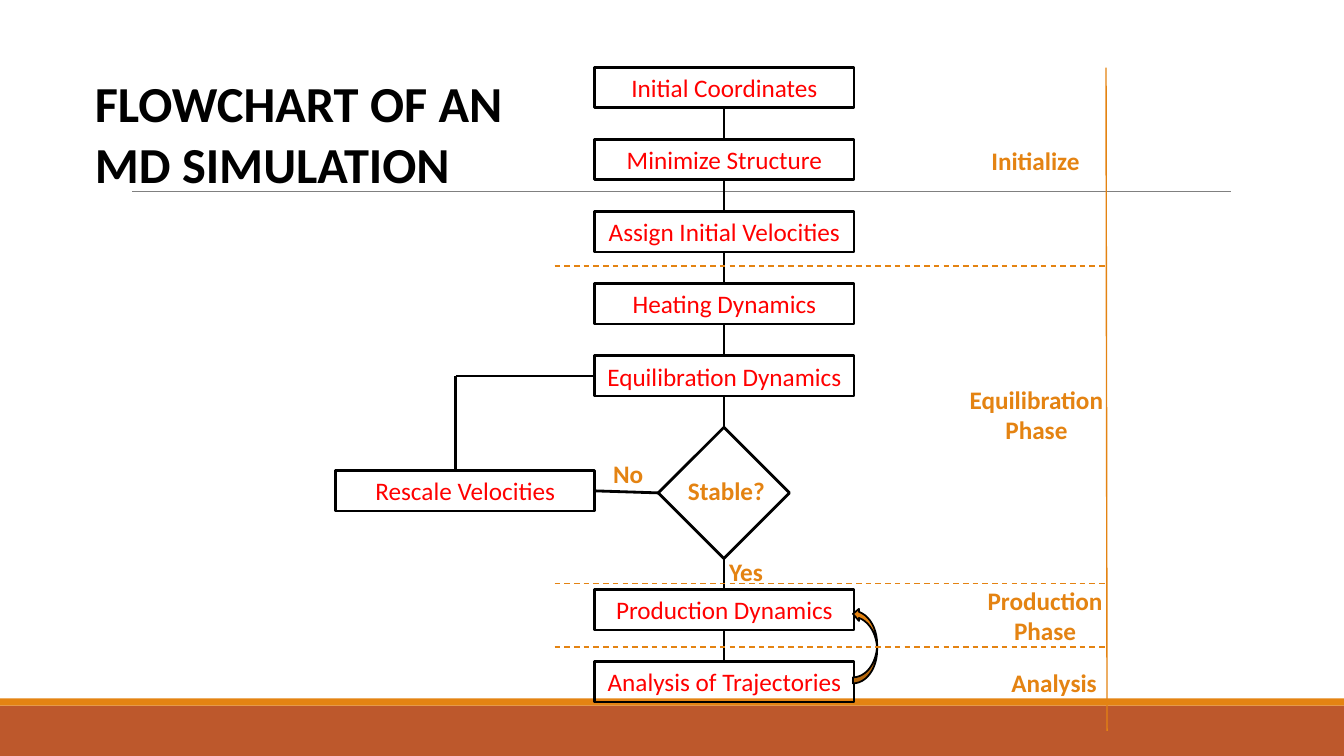
from lxml.etree import SubElement
from pptx import Presentation
from pptx.dml.color import RGBColor
from pptx.enum.dml import MSO_LINE
from pptx.enum.shapes import MSO_CONNECTOR, MSO_SHAPE
from pptx.enum.text import MSO_ANCHOR, PP_ALIGN
from pptx.oxml.ns import qn
from pptx.util import Inches, Pt

BLACK = RGBColor(0x00, 0x00, 0x00)
RED = RGBColor(0xFF, 0x00, 0x00)
ORANGE = RGBColor(0xE4, 0x83, 0x12)
RUST = RGBColor(0xBD, 0x58, 0x2C)
GRAY = RGBColor(0x80, 0x80, 0x80)

FONT = "Calibri"
BOX_LEFT, BOX_WIDTH, BOX_HEIGHT = 5.9, 2.57, 0.4
FLOW_X = 7.18
FIRST_TOP, PRODUCTION_TOP, STEP = 0.67, 5.85, 0.715
DIAMOND_TOP, DIAMOND_SIZE = 4.24, 1.3

PREPARATION_STEPS = [
    "Initial Coordinates",
    "Minimize Structure",
    "Assign Initial Velocities",
    "Heating Dynamics",
    "Equilibration Dynamics",
]
PRODUCTION_STEPS = ["Production Dynamics", "Analysis of Trajectories"]
LABELS = [
    ("Stable?", 6.72, 4.67, 0.97, 0.4),
    ("Yes", 7.13, 5.47, 0.54, 0.4),
    ("No", 5.98, 4.5, 0.5, 0.4),
    ("Initialize", 9.73, 1.39, 1.08, 0.4),
    ("Equilibration\nPhase", 9.51, 3.76, 1.54, 0.71),
    ("Production\nPhase", 9.69, 5.76, 1.35, 0.71),
    ("Analysis", 9.93, 6.57, 1.05, 0.4),
]


def format_text(text_frame, size, color, bold, alignment):
    for paragraph in text_frame.paragraphs:
        paragraph.alignment = alignment
        for run in paragraph.runs:
            run.font.name = FONT
            run.font.size = Pt(size)
            run.font.bold = bold
            run.font.color.rgb = color


def add_outline(slide, kind, left, top, width, height, line_width=2, fill=None):
    shape = slide.shapes.add_shape(
        kind, Inches(left), Inches(top), Inches(width), Inches(height)
    )
    shape.shadow.inherit = False
    if fill is None:
        shape.fill.background()
    else:
        shape.fill.solid()
        shape.fill.fore_color.rgb = fill
    shape.line.color.rgb = BLACK
    shape.line.width = Pt(line_width)
    return shape


def add_band(slide, top, height, color):
    band = add_outline(slide, MSO_SHAPE.RECTANGLE, 0, top, 13.33, height, fill=color)
    band.line.fill.background()


def add_step(slide, text, left, top):
    box = add_outline(slide, MSO_SHAPE.RECTANGLE, left, top, BOX_WIDTH, BOX_HEIGHT)
    box.text_frame.text = text
    format_text(box.text_frame, 18, RED, False, PP_ALIGN.CENTER)


def add_label(slide, text, left, top, width, height):
    label = slide.shapes.add_textbox(
        Inches(left), Inches(top), Inches(width), Inches(height)
    )
    label.text_frame.word_wrap = False
    label.text_frame.text = text
    format_text(label.text_frame, 18, ORANGE, True, PP_ALIGN.CENTER)


def add_line(slide, start, end, color=BLACK, width=2, dashed=False):
    line = slide.shapes.add_connector(
        MSO_CONNECTOR.STRAIGHT, *(Inches(value) for value in (*start, *end))
    )
    line.line.color.rgb = color
    line.line.width = Pt(width)
    if dashed:
        line.line.dash_style = MSO_LINE.DASH
    SubElement(line._element.spPr, qn("a:effectLst"))


def add_title(slide):
    title = slide.shapes.title
    title.left, title.top = Inches(0.84), Inches(0.67)
    title.width, title.height = Inches(4.69), Inches(1.31)
    title.text_frame.text = "FLOWCHART OF AN MD SIMULATION"
    title.text_frame.word_wrap = True
    title.text_frame.vertical_anchor = MSO_ANCHOR.TOP
    format_text(title.text_frame, 36, BLACK, True, PP_ALIGN.LEFT)


def add_flow(slide):
    stations = [(DIAMOND_TOP, DIAMOND_SIZE)]
    for first_top, steps in (
        (FIRST_TOP, PREPARATION_STEPS),
        (PRODUCTION_TOP, PRODUCTION_STEPS),
    ):
        for index, text in enumerate(steps):
            top = first_top + index * STEP
            add_step(slide, text, BOX_LEFT, top)
            stations.append((top, BOX_HEIGHT))
    add_outline(
        slide, MSO_SHAPE.DIAMOND, 6.53, DIAMOND_TOP, DIAMOND_SIZE, DIAMOND_SIZE
    )
    stations.sort()
    for (top, height), (next_top, _) in zip(stations, stations[1:]):
        add_line(slide, (FLOW_X, top + height), (FLOW_X, next_top))


def add_loops(slide):
    add_step(slide, "Rescale Velocities", BOX_LEFT - BOX_WIDTH, 4.67)
    add_line(slide, (6.53, 4.89), (BOX_LEFT, 4.87))
    add_line(slide, (4.52, 4.67), (4.52, 3.73))
    add_line(slide, (4.52, 3.73), (BOX_LEFT, 3.73))
    arrow = add_outline(
        slide, MSO_SHAPE.CURVED_LEFT_ARROW, 8.46, 6.03, 0.24, 0.75, 1.25, ORANGE
    )
    arrow._element.spPr.xfrm.set("flipV", "1")


def add_phases(slide):
    add_line(slide, (10.97, 0.67), (10.98, 7.25), ORANGE, 1)
    for y in (2.64, 5.79, 6.42):
        add_line(slide, (5.5, y), (10.99, y), ORANGE, 1, dashed=True)


def main():
    presentation = Presentation()
    presentation.slide_width = Inches(13.33)
    presentation.slide_height = Inches(7.5)
    slide = presentation.slides.add_slide(presentation.slide_layouts[5])
    add_band(slide, 7, 0.5, RUST)
    add_band(slide, 6.93, 0.07, ORANGE)
    add_line(slide, (1.31, 1.9), (12.21, 1.9), GRAY, 0.5)
    add_title(slide)
    add_flow(slide)
    add_loops(slide)
    add_phases(slide)
    for label in LABELS:
        add_label(slide, *label)
    presentation.save("out.pptx")


if __name__ == "__main__":
    main()
